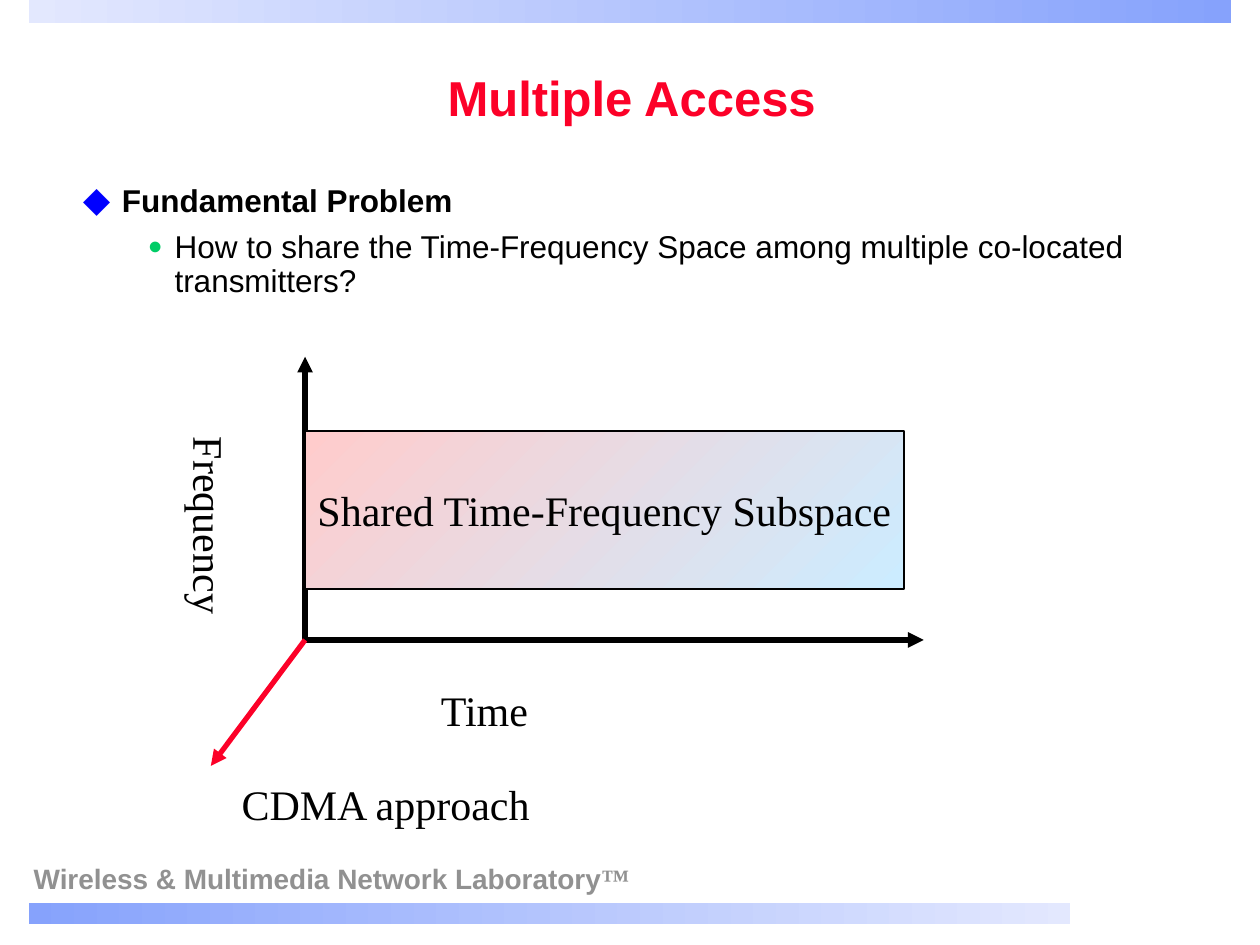
from dataclasses import dataclass

from lxml.etree import SubElement
from pptx import Presentation
from pptx.dml.color import RGBColor
from pptx.enum.shapes import MSO_CONNECTOR, MSO_SHAPE
from pptx.enum.text import MSO_ANCHOR, PP_ALIGN
from pptx.oxml.ns import qn
from pptx.util import Cm, Pt


@dataclass(frozen=True)
class Theme:
    """Colours, fonts and type sizes of the slide."""
    black: str = "000000"
    red: str = "FC0128"
    grey: str = "919191"
    diamond: str = "0000FF"
    dot: str = "00CC66"
    bar_dark: str = "86A2FC"
    bar_light: str = "E3E8FE"
    space_start: str = "FFCCCC"
    space_end: str = "CCECFF"
    sans: str = "Arial"
    serif: str = "Times New Roman"
    title_size: int = 28
    label_size: int = 24
    body_size: int = 18
    footer_size: int = 16


THEME = Theme()


def add_run(paragraph, text, size, font_name, color=THEME.black, bold=False):
    """Append one formatted run to a paragraph."""
    run = paragraph.add_run()
    run.text = text
    run.font.size = Pt(size)
    run.font.name = font_name
    run.font.bold = bold
    run.font.color.rgb = RGBColor.from_string(color)


def add_text_box(slide, box, wrap=True, anchor=MSO_ANCHOR.TOP):
    """Add an empty text box and return it."""
    shape = slide.shapes.add_textbox(*map(Cm, box))
    shape.text_frame.word_wrap = wrap
    shape.text_frame.vertical_anchor = anchor
    return shape


def add_gradient_box(slide, box, start, end, angle=0):
    """Add an unlined rectangle with a two-colour gradient."""
    shape = slide.shapes.add_shape(MSO_SHAPE.RECTANGLE, *map(Cm, box))
    shape.shadow.inherit = False
    shape.fill.gradient()
    shape.fill.gradient_angle = angle
    for stop, color in zip(shape.fill.gradient_stops, (start, end)):
        stop.color.rgb = RGBColor.from_string(color)
    shape.line.fill.background()
    return shape


def add_arrow(slide, start, end, color):
    """Add a straight arrow between two points."""
    arrow = slide.shapes.add_connector(
        MSO_CONNECTOR.STRAIGHT, *map(Cm, (*start, *end)))
    arrow.line.width = Pt(3)
    arrow.line.color.rgb = RGBColor.from_string(color)
    properties = arrow.element.find(qn("p:spPr"))
    SubElement(properties.find(qn("a:ln")), qn("a:tailEnd"), type="triangle")
    SubElement(properties, qn("a:effectLst"))


def add_bullet(paragraph, character, color, margin, hanging):
    """Give a paragraph a coloured bullet and a hanging indent."""
    properties = paragraph._p.get_or_add_pPr()
    properties.set("marL", str(Cm(margin)))
    properties.set("indent", str(-Cm(hanging)))
    bullet_color = SubElement(properties, qn("a:buClr"))
    SubElement(bullet_color, qn("a:srgbClr"), val=color)
    SubElement(properties, qn("a:buSzPct"), val="125000")
    SubElement(properties, qn("a:buFont"), typeface=THEME.sans)
    SubElement(properties, qn("a:buChar"), char=character)


def add_title(slide, box):
    """Place the centred slide title."""
    shape = add_text_box(slide, box, anchor=MSO_ANCHOR.MIDDLE)
    paragraph = shape.text_frame.paragraphs[0]
    paragraph.alignment = PP_ALIGN.CENTER
    paragraph.line_spacing = 0.9
    add_run(paragraph, "Multiple Access", THEME.title_size, THEME.sans,
            THEME.red, bold=True)


def add_body(slide, box):
    """Place the problem statement and its question."""
    frame = add_text_box(slide, box).text_frame
    heading = frame.paragraphs[0]
    add_bullet(heading, "⬥", THEME.diamond, 0.79, 0.79)
    add_run(heading, "Fundamental Problem", THEME.body_size, THEME.sans,
            bold=True)
    question = frame.add_paragraph()
    question.level = 1
    add_bullet(question, "•", THEME.dot, 1.85, 0.53)
    question.line_spacing = 0.9
    question.space_before = Pt(7)
    add_run(question, "How to share the Time-Frequency Space among multiple "
            "co-located transmitters?", THEME.body_size, THEME.sans)


def add_diagram(slide, box):
    """Draw the axes, the shared subspace and the axis labels."""
    left, top, width, height = box
    origin_x, origin_y = left + 2.8, top + 5.71
    origin = (origin_x, origin_y)
    add_arrow(slide, origin, (left + width, origin_y), THEME.black)
    add_arrow(slide, origin, (origin_x, top), THEME.black)

    subspace = add_gradient_box(
        slide, (origin_x, top + 1.5, 12.07, 3.18),
        THEME.space_start, THEME.space_end, 315)
    subspace.line.color.rgb = RGBColor.from_string(THEME.black)
    subspace.line.width = Pt(1)
    subspace.text_frame.word_wrap = False
    subspace.text_frame.vertical_anchor = MSO_ANCHOR.MIDDLE
    caption = subspace.text_frame.paragraphs[0]
    caption.alignment = PP_ALIGN.CENTER
    add_run(caption, "Shared Time-Frequency Subspace", THEME.label_size,
            THEME.serif)

    add_arrow(slide, origin, (origin_x - 1.9, origin_y + 2.54), THEME.red)
    labels = (
        ("Time", (5.29, 6.48, 2.29, 1.27), "horz"),
        ("Frequency", (0, 1.37, 1.52, 3.84), "eaVert"),
        ("CDMA approach", (1.27, 8.38, 6.38, 1.27), "horz"),
    )
    for text, (x, y, label_width, label_height), direction in labels:
        label = add_text_box(
            slide, (left + x, top + y, label_width, label_height), wrap=False)
        label.element.txBody.find(qn("a:bodyPr")).set("vert", direction)
        add_run(label.text_frame.paragraphs[0], text, THEME.label_size,
                THEME.serif)


def add_footer(slide, box):
    """Place the laboratory name."""
    paragraph = add_text_box(slide, box).text_frame.paragraphs[0]
    paragraph.line_spacing = 0.9
    for text, font_name in (
            ("Wireless & Multimedia Network Laboratory", THEME.sans),
            ("™", THEME.serif)):
        add_run(paragraph, text, THEME.footer_size, font_name, THEME.grey,
                bold=True)


def main():
    """Build and save the presentation."""
    presentation = Presentation()
    presentation.slide_width = Cm(25.4)
    presentation.slide_height = Cm(19.05)
    slide = presentation.slides.add_slide(presentation.slide_layouts[6])
    add_gradient_box(slide, (0.58, 18.21, 21, 0.42),
                     THEME.bar_dark, THEME.bar_light)
    add_gradient_box(slide, (0.58, 0, 24.23, 0.46),
                     THEME.bar_light, THEME.bar_dark)
    add_footer(slide, (0.43, 17.32, 12.7, 0.86))
    add_title(slide, (1.57, 1.07, 22.33, 1.91))
    add_body(slide, (1.42, 3.53, 23.24, 13.41))
    add_diagram(slide, (3.35, 7.19, 15.27, 9.65))
    presentation.save("out.pptx")


if __name__ == "__main__":
    main()
